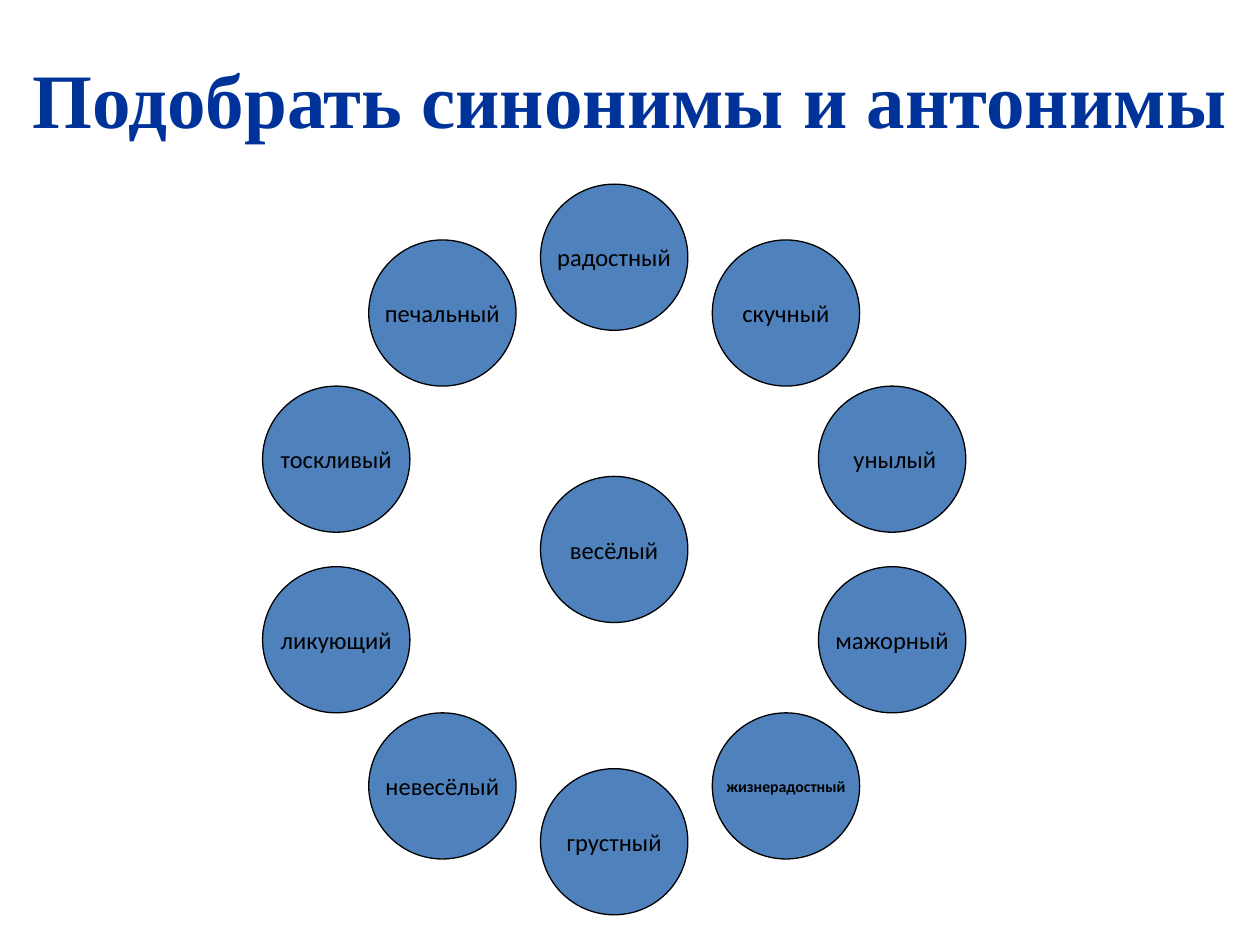
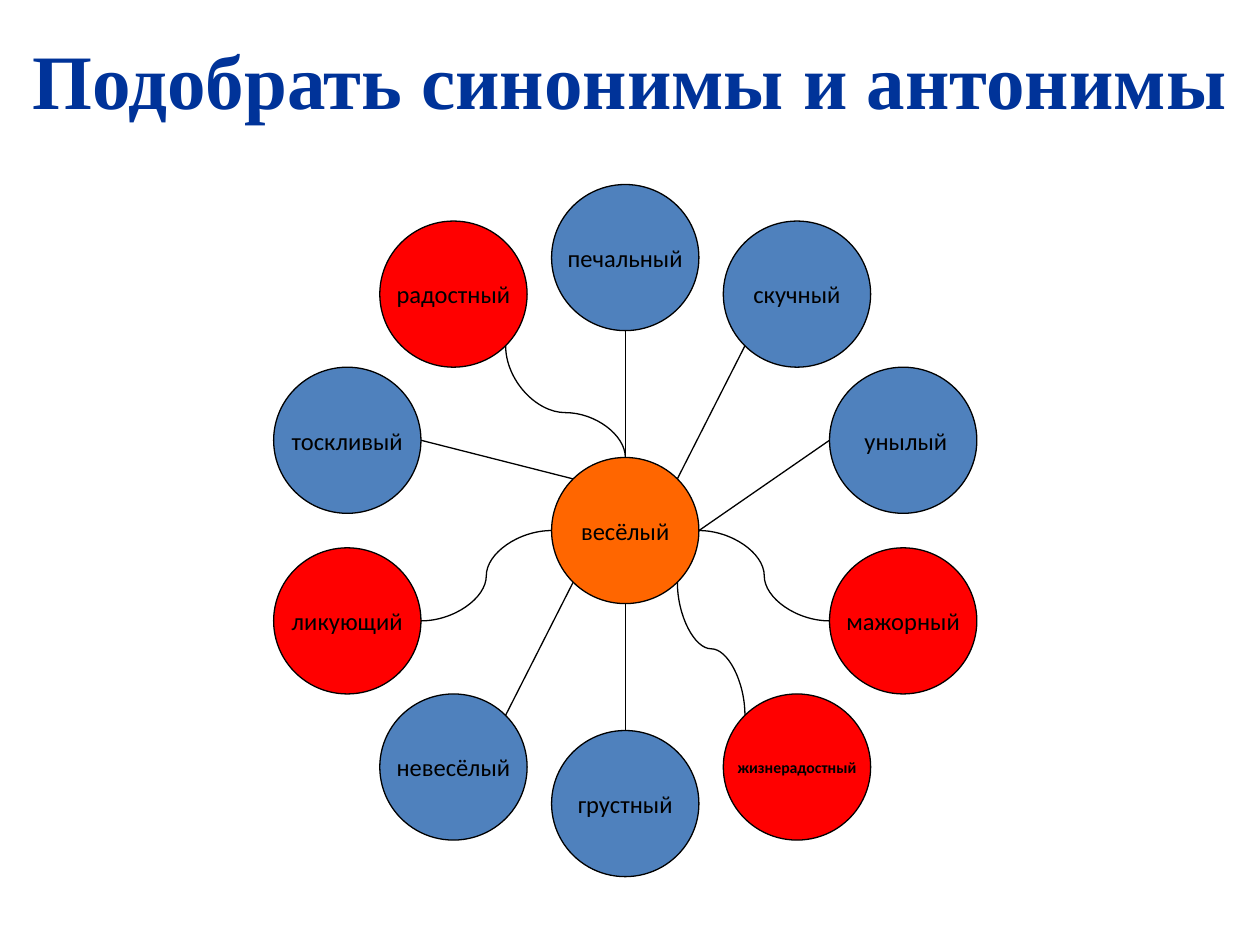
import math
from dataclasses import dataclass

import pptx
import pptx.dml.color
import pptx.enum.shapes
import pptx.enum.text
import pptx.oxml
import pptx.oxml.ns
import pptx.util

Pt = pptx.util.Pt
SHAPES = pptx.enum.shapes.MSO_SHAPE
CONNECTORS = pptx.enum.shapes.MSO_CONNECTOR
TEXT = pptx.enum.text


@dataclass(frozen=True)
class Theme:
    title_color: str = "003399"
    antonym: str = "4F81BD"
    synonym: str = "FF0000"
    hub: str = "FF6600"
    ink: str = "000000"
    title_font: str = "Times New Roman"
    body_font: str = "Calibri"
    title_size: float = 44
    word_size: float = 14
    long_word_size: float = 9
    line_width: float = 0.75
    circle_width: float = 84.2
    circle_height: float = 83.5
    ring_radius: float = 167


# Points on the edge of a circle, as unit vectors
DIAGONAL = math.sqrt(0.5)
SITES = {
    "N": (0, -1), "S": (0, 1), "W": (-1, 0), "E": (1, 0),
    "NW": (-DIAGONAL, -DIAGONAL), "NE": (DIAGONAL, -DIAGONAL),
    "SW": (-DIAGONAL, DIAGONAL), "SE": (DIAGONAL, DIAGONAL),
}

TITLE = "Подобрать синонимы и антонимы"
HUB_WORD = "весёлый"
LONG_WORD = "жизнерадостный"
SYNONYMS = {"радостный", "мажорный", LONG_WORD, "ликующий"}

# Words clockwise from the top
MIXED_WORDS = ["радостный", "скучный", " унылый", "мажорный", LONG_WORD,
               "грустный", "невесёлый", "ликующий", "тоскливый", "печальный"]
SORTED_WORDS = ["печальный", *MIXED_WORDS[1:-1], "радостный"]

# Word, its site, the hub's site
STRAIGHT_LINKS = [
    ("печальный", "S", "N"), ("скучный", "SW", "NE"), (" унылый", "W", "E"),
    ("грустный", "N", "S"), ("невесёлый", "NE", "SW"), ("тоскливый", "E", "NW"),
]
# The same, then whether the curve leaves vertically, and its bend in percent
CURVED_LINKS = [
    ("мажорный", "W", "E", False, 50), ("ликующий", "E", "W", False, 50),
    (LONG_WORD, "NW", "SE", True, 50), ("радостный", "SE", "N", True, 59.9),
]


class SlideBuilder:
    def __init__(self, deck, theme):
        self.deck = deck
        self.theme = theme
        self.page = None

    def color(self, value):
        return pptx.dml.color.RGBColor.from_string(value)

    def style_text(self, frame, font, size, color, bold):
        para = frame.paragraphs[0]
        para.alignment = TEXT.PP_ALIGN.CENTER
        for span in para.runs:
            span.font.name = font
            span.font.size = Pt(size)
            span.font.bold = bold
            span.font.color.rgb = self.color(color)

    def style_line(self, line):
        line.color.rgb = self.color(self.theme.ink)
        line.width = Pt(self.theme.line_width)

    def add_page(self, title, top):
        self.page = self.deck.slides.add_slide(self.deck.slide_layouts[5])
        box = self.page.shapes.title
        box.left, box.top = Pt(0), Pt(top)
        box.width, box.height = self.deck.slide_width, Pt(60)
        frame = box.text_frame
        frame.text = title
        frame.auto_size = TEXT.MSO_AUTO_SIZE.NONE
        frame.vertical_anchor = TEXT.MSO_ANCHOR.TOP
        self.style_text(frame, self.theme.title_font, self.theme.title_size,
                        self.theme.title_color, True)

    def add_circle(self, word, center, fill):
        theme = self.theme
        width, height = theme.circle_width, theme.circle_height
        circle = self.page.shapes.add_shape(
            SHAPES.OVAL, Pt(center[0] - width / 2), Pt(center[1] - height / 2),
            Pt(width), Pt(height))
        circle.shadow.inherit = False
        circle.fill.solid()
        circle.fill.fore_color.rgb = self.color(fill)
        self.style_line(circle.line)
        frame = circle.text_frame
        frame.text = word
        frame.word_wrap = False
        frame.vertical_anchor = TEXT.MSO_ANCHOR.MIDDLE
        frame.margin_left = frame.margin_right = Pt(0)
        frame.margin_top = frame.margin_bottom = Pt(0)
        is_long = word == LONG_WORD
        self.style_text(frame, theme.body_font,
                        theme.long_word_size if is_long else theme.word_size,
                        theme.ink, is_long)

    def add_ring(self, words, center, pole_radius, fills):
        """Place words clockwise from the top and return their centers."""
        centers = {}
        for index, word in enumerate(words):
            angle = math.tau * index / len(words)
            at_pole = index % (len(words) // 2) == 0
            radius = pole_radius if at_pole else self.theme.ring_radius
            centers[word] = (center[0] + radius * math.sin(angle),
                             center[1] - radius * math.cos(angle))
            self.add_circle(word, centers[word], fills.get(word, self.theme.antonym))
        return centers

    def edge(self, center, site):
        across, down = SITES[site]
        return (center[0] + across * self.theme.circle_width / 2,
                center[1] + down * self.theme.circle_height / 2)

    def add_line(self, start, end, kind=CONNECTORS.STRAIGHT):
        line = self.page.shapes.add_connector(kind, *map(Pt, (*start, *end)))
        self.style_line(line.line)
        properties = line._element.spPr
        properties.append(pptx.oxml.parse_xml(
            f'<a:effectLst {pptx.oxml.ns.nsdecls("a")}/>'))
        return properties

    def add_curve(self, start, end, vertical, bend):
        if vertical:
            # Lay the curve on its side, then turn it back by 270 degrees
            middle_x, middle_y = (start[0] + end[0]) / 2, (start[1] + end[1]) / 2
            half_x, half_y = (end[0] - start[0]) / 2, (end[1] - start[1]) / 2
            start = (middle_x + half_y, middle_y - half_x)
            end = (middle_x - half_y, middle_y + half_x)
        properties = self.add_line(start, end, CONNECTORS.CURVE)
        if vertical:
            properties.find(pptx.oxml.ns.qn("a:xfrm")).set("rot", str(270 * 60000))
        guides = properties.find(".//" + pptx.oxml.ns.qn("a:avLst"))
        guides.append(pptx.oxml.parse_xml(
            f'<a:gd {pptx.oxml.ns.nsdecls("a")} name="adj1" '
            f'fmla="val {round(bend * 1000)}"/>'))


def main():
    deck = pptx.Presentation()
    deck.slide_width, deck.slide_height = Pt(720), Pt(540)
    theme = Theme()
    builder = SlideBuilder(deck, theme)

    # Task: all words in one colour
    hub = (351, 314)
    builder.add_page(TITLE, 26)
    builder.add_ring(MIXED_WORDS, hub, theme.ring_radius, {})
    builder.add_circle(HUB_WORD, hub, theme.antonym)

    # Answer: synonyms in red on curves, antonyms on straight lines
    hub = (357.3, 303.2)
    builder.add_page(TITLE, 15)
    centers = builder.add_ring(SORTED_WORDS, hub, 156,
                               dict.fromkeys(SYNONYMS, theme.synonym))
    builder.add_circle(HUB_WORD, hub, theme.hub)
    for word, word_site, hub_site in STRAIGHT_LINKS:
        builder.add_line(builder.edge(centers[word], word_site),
                         builder.edge(hub, hub_site))
    for word, word_site, hub_site, vertical, bend in CURVED_LINKS:
        builder.add_curve(builder.edge(centers[word], word_site),
                          builder.edge(hub, hub_site), vertical, bend)

    deck.save("out.pptx")


if __name__ == "__main__":
    main()
